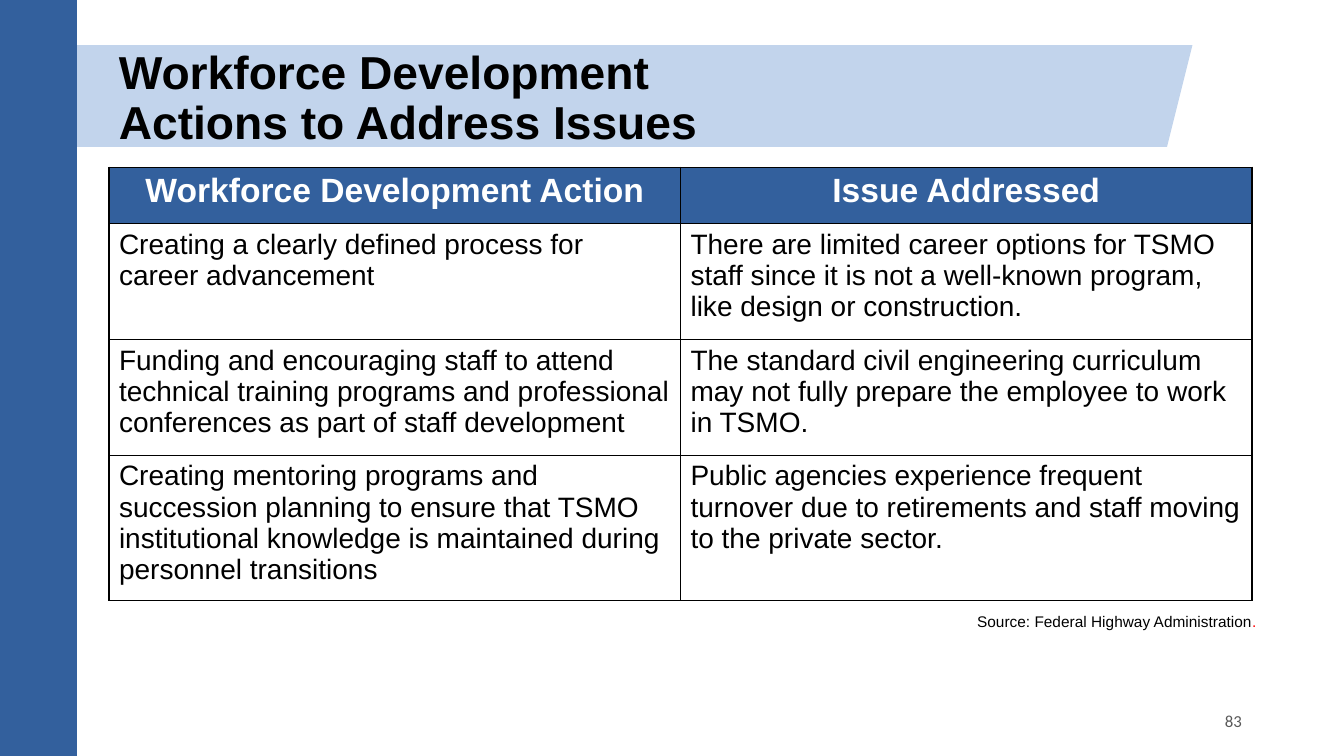
"""Build the slide on workforce development actions and the issues they address."""
from dataclasses import dataclass

from lxml import etree
from pptx import Presentation
from pptx.dml.color import RGBColor
from pptx.enum.shapes import MSO_SHAPE
from pptx.enum.text import MSO_ANCHOR, PP_ALIGN
from pptx.oxml.ns import qn
from pptx.slide import Slide
from pptx.table import _Cell
from pptx.text.text import _Paragraph
from pptx.util import Pt

RECTANGLE = MSO_SHAPE.RECTANGLE
PARALLELOGRAM = MSO_SHAPE.PARALLELOGRAM
TOP, MIDDLE = MSO_ANCHOR.TOP, MSO_ANCHOR.MIDDLE
LEFT, CENTER, RIGHT = PP_ALIGN.LEFT, PP_ALIGN.CENTER, PP_ALIGN.RIGHT
BLANK_LAYOUT = 6


@dataclass(frozen=True)
class Theme:
    """Colours, fonts and type sizes of the slide."""
    navy: str = "33609D"
    pale_blue: str = "C2D4EC"
    black: str = "000000"
    white: str = "FFFFFF"
    red: str = "FF0000"
    grey: str = "595959"
    font: str = "Arial"
    number_font: str = "Calibri"
    title_size: float = 33
    header_size: float = 24
    body_size: float = 20
    number_size: float = 12
    source_size: float = 11
    border_width: float = 1


THEME = Theme()


@dataclass(frozen=True)
class Area:
    """A rectangle on the slide, in points."""
    left: float
    top: float
    width: float
    height: float

    def lengths(self) -> tuple[Pt, Pt, Pt, Pt]:
        """Return the four values as lengths."""
        return Pt(self.left), Pt(self.top), Pt(self.width), Pt(self.height)


@dataclass(frozen=True)
class TextStyle:
    """The look of one paragraph."""
    size: float
    color: str = THEME.black
    bold: bool = False
    align: PP_ALIGN = LEFT
    font: str = THEME.font


@dataclass(frozen=True)
class Panel:
    """A filled background shape."""
    kind: MSO_SHAPE
    area: Area
    color: str


@dataclass(frozen=True)
class Label:
    """A text box with one paragraph."""
    text: str
    area: Area
    style: TextStyle
    anchor: MSO_ANCHOR = MIDDLE
    line_spacing: float = 1.0


PANELS = (
    Panel(PARALLELOGRAM, Area(17.3, 32.2, 834.5, 72.8), THEME.pale_blue),
    Panel(RECTANGLE, Area(0, 0, 55, 540), THEME.navy),
)
TITLE = Label("Workforce Development\nActions to Address Issues",
              Area(77.8, 33.8, 708.5, 74.2),
              TextStyle(THEME.title_size, bold=True), line_spacing=0.9)
SOURCE = Label("Source: Federal Highway Administration",
               Area(610.6, 433.4, 293.8, 20.9),
               TextStyle(THEME.source_size, align=RIGHT), anchor=TOP)
PAGE_NUMBER = Label("83", Area(678.2, 500.4, 216, 28.8),
                    TextStyle(THEME.number_size, THEME.grey, align=RIGHT,
                              font=THEME.number_font))

TABLE_AREA = Area(77.8, 119.5, 816.5, 288.7)
HEADER_HEIGHT, BODY_HEIGHT = 40.3, 82.8
HEADER_STYLE = TextStyle(THEME.header_size, THEME.white, True, CENTER)
BODY_STYLE = TextStyle(THEME.body_size)
ACTIONS = (
    ("Workforce Development Action", "Issue Addressed"),
    ("Creating a clearly defined process for career advancement",
     "There are limited career options for TSMO staff since it is not a "
     "well-known program, like design or construction."),
    ("Funding and encouraging staff to attend technical training programs and "
     "professional conferences as part of staff development",
     "The standard civil engineering curriculum may not fully prepare the "
     "employee to work in TSMO."),
    ("Creating mentoring programs and succession planning to ensure that TSMO "
     "institutional knowledge is maintained during personnel transitions",
     "Public agencies experience frequent turnover due to retirements and "
     "staff moving to the private sector."),
)


def write(para: _Paragraph, text: str, style: TextStyle) -> None:
    """Fill a paragraph and set its look."""
    para.text = text
    para.alignment = style.align
    para.font.name = style.font
    para.font.size = Pt(style.size)
    para.font.bold = style.bold
    para.font.color.rgb = RGBColor.from_string(style.color)


def add_panel(page: Slide, panel: Panel) -> None:
    """Draw a filled shape without outline or shadow."""
    shape = page.shapes.add_shape(panel.kind, *panel.area.lengths())
    shape.shadow.inherit = False
    shape.fill.solid()
    shape.fill.fore_color.rgb = RGBColor.from_string(panel.color)
    shape.line.fill.background()


def add_label(page: Slide, label: Label) -> _Paragraph:
    """Draw a text box and return its paragraph."""
    frame = page.shapes.add_textbox(*label.area.lengths()).text_frame
    frame.word_wrap = True
    frame.vertical_anchor = label.anchor
    para = frame.paragraphs[0]
    write(para, label.text, label.style)
    para.line_spacing = label.line_spacing
    return para


def set_borders(cell: _Cell) -> None:
    """Give a cell a thin line on all four sides."""
    properties = cell._tc.get_or_add_tcPr()
    for index, side in enumerate(("a:lnL", "a:lnR", "a:lnT", "a:lnB")):
        line = etree.Element(qn(side), w=str(Pt(THEME.border_width)))
        fill = etree.SubElement(line, qn("a:solidFill"))
        etree.SubElement(fill, qn("a:srgbClr"), val=THEME.black)
        properties.insert(index, line)


def add_action_table(page: Slide) -> None:
    """Draw the table of actions and issues."""
    columns = len(ACTIONS[0])
    table = page.shapes.add_table(len(ACTIONS), columns, *TABLE_AREA.lengths()).table
    for column in table.columns:
        column.width = Pt(TABLE_AREA.width / columns)
    for row_index, texts in enumerate(ACTIONS):
        is_header = row_index == 0
        table.rows[row_index].height = Pt(HEADER_HEIGHT if is_header else BODY_HEIGHT)
        for column_index, text in enumerate(texts):
            cell = table.cell(row_index, column_index)
            write(cell.text_frame.paragraphs[0], text,
                  HEADER_STYLE if is_header else BODY_STYLE)
            cell.fill.solid()
            cell.fill.fore_color.rgb = RGBColor.from_string(
                THEME.navy if is_header else THEME.white)
            set_borders(cell)


def main() -> None:
    """Build and save the deck."""
    deck = Presentation()
    deck.slide_width, deck.slide_height = Pt(960), Pt(540)
    page = deck.slides.add_slide(deck.slide_layouts[BLANK_LAYOUT])
    for panel in PANELS:
        add_panel(page, panel)
    add_label(page, TITLE)
    add_action_table(page)
    full_stop = add_label(page, SOURCE).add_run()
    full_stop.text = "."
    full_stop.font.color.rgb = RGBColor.from_string(THEME.red)
    add_label(page, PAGE_NUMBER)
    deck.save("out.pptx")


if __name__ == "__main__":
    main()
